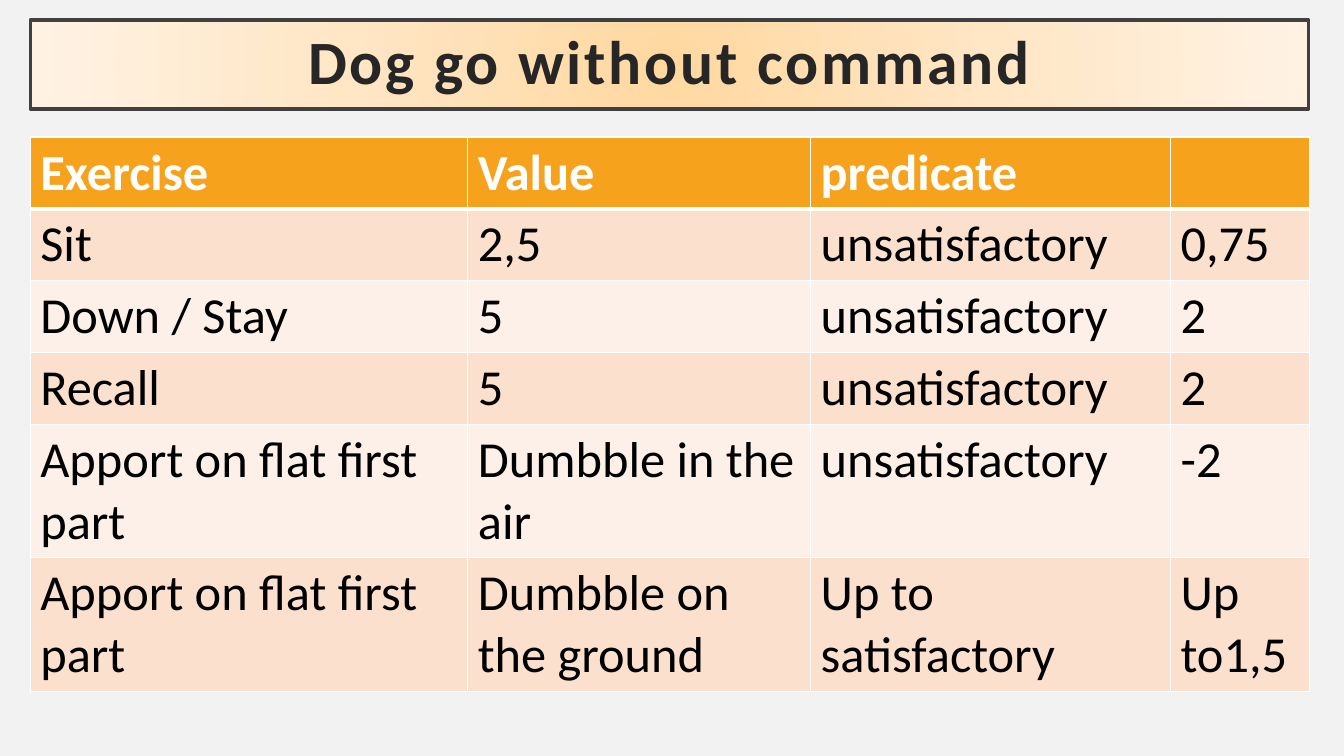
from dataclasses import dataclass
from lxml.etree import SubElement
from pptx import Presentation
from pptx.dml.color import RGBColor
from pptx.enum.shapes import MSO_SHAPE
from pptx.enum.text import MSO_ANCHOR, PP_ALIGN
from pptx.oxml import parse_xml
from pptx.oxml.ns import nsdecls, qn
from pptx.util import Inches, Pt

TITLE = "Dog go without command"
ROWS = [
    ("Exercise", "Value", "predicate", ""),
    ("Sit", "2,5", "unsatisfactory", "0,75"),
    ("Down / Stay", "5", "unsatisfactory", "2"),
    ("Recall", "5", "unsatisfactory", "2"),
    ("Apport on flat first part", "Dumbble in the air", "unsatisfactory", "-2"),
    ("Apport on flat first part", "Dumbble on the ground",
     "Up to satisfactory", "Up to1,5"),
]
WIDE, HIGH = 13.33, 7.5
LEFT, SPAN = 0.3, 12.68
BAR_TOP, BAR_HIGH, GRID_TOP = 0.2, 0.88, 1.36
COLS = (4.34, 3.4, 3.57, 1.38)
LINES = (1, 1, 1, 1, 2, 2)
LINE_HIGH, PAD = 0.61, 0.1


@dataclass(frozen=True)
class Theme:
    font: str = "Calibri"
    title: int = 44
    body: int = 36
    page: str = "F2F2F2"
    ink: str = "262626"
    edge: str = "404040"
    white: str = "FFFFFF"
    black: str = "000000"
    head: str = "F6A21D"
    bands: tuple = ("FDF0E8", "FBE0CD")
    glow: tuple = ("FFD8A0", "FFE6C5", "FFF2E3")


LOOK = Theme()


def rgb(code):
    return RGBColor.from_string(code)


def write(frame, text, size, color, bold):
    run = frame.paragraphs[0].add_run()
    run.text = text
    style = {"name": LOOK.font, "size": Pt(size), "bold": bold}
    for key, value in style.items():
        setattr(run.font, key, value)
    run.font.color.rgb = rgb(color)
    return run


def add_glow(shape):
    """Fill the shape with a gradient that spreads from its centre."""
    last = len(LOOK.glow) - 1
    stops = "".join(
        f'<a:gs pos="{100000 * i // last}"><a:srgbClr val="{code}"/></a:gs>'
        for i, code in enumerate(LOOK.glow))
    glow = parse_xml(
        f'<a:gradFill {nsdecls("a")} rotWithShape="1"><a:gsLst>{stops}</a:gsLst>'
        '<a:path path="circle"><a:fillToRect l="50000" t="50000" r="50000" '
        'b="50000"/></a:path></a:gradFill>')
    shape.fill.background()
    props = shape._element.spPr
    props.replace(props.find(qn("a:noFill")), glow)


def add_title(slide):
    bar = slide.shapes.add_shape(
        MSO_SHAPE.RECTANGLE,
        *map(Inches, (LEFT, BAR_TOP, SPAN, BAR_HIGH)))
    bar.shadow.inherit = False
    add_glow(bar)
    bar.line.color.rgb = rgb(LOOK.edge)
    bar.line.width = Pt(2.5)
    frame = bar.text_frame
    style = {"word_wrap": True, "vertical_anchor": MSO_ANCHOR.MIDDLE}
    style |= {f"margin_{side}": Inches(0.2)
              for side in ("left", "top", "right", "bottom")}
    for key, value in style.items():
        setattr(frame, key, value)
    line = frame.paragraphs[0]
    line.alignment = PP_ALIGN.CENTER
    line.line_spacing = 0.9
    run = write(frame, TITLE, LOOK.title, LOOK.ink, True)
    run._r.get_or_add_rPr().set("spc", "200")


def add_edges(cell, row):
    """Draw white cell borders, thicker between the header and the body."""
    thick = {0: "lnB", 1: "lnT"}.get(row)
    props = cell._tc.get_or_add_tcPr()
    for side in ("lnL", "lnR", "lnT", "lnB"):
        width = Pt(3 if side == thick else 1)
        edge = SubElement(props, qn(f"a:{side}"), w=str(width))
        fill = SubElement(edge, qn("a:solidFill"))
        SubElement(fill, qn("a:srgbClr"), val=LOOK.white)


def add_grid(slide):
    highs = [PAD + LINE_HIGH * count for count in LINES]
    grid = slide.shapes.add_table(
        len(ROWS), len(COLS),
        *map(Inches, (LEFT, GRID_TOP, SPAN, sum(highs)))).table
    for col, width in zip(grid.columns, COLS):
        col.width = Inches(width)
    for row, high in zip(grid.rows, highs):
        row.height = Inches(high)
    for i, texts in enumerate(ROWS):
        head = i == 0
        for j, text in enumerate(texts):
            cell = grid.cell(i, j)
            add_edges(cell, i)
            cell.fill.solid()
            cell.fill.fore_color.rgb = rgb(LOOK.head if head else LOOK.bands[i % 2])
            if text:
                write(cell.text_frame, text, LOOK.body,
                      LOOK.white if head else LOOK.black, head)


def main():
    deck = Presentation()
    deck.slide_width, deck.slide_height = Inches(WIDE), Inches(HIGH)
    slide = deck.slides.add_slide(deck.slide_layouts[6])
    slide.background.fill.solid()
    slide.background.fill.fore_color.rgb = rgb(LOOK.page)
    add_title(slide)
    add_grid(slide)
    deck.save("out.pptx")


if __name__ == "__main__":
    main()
